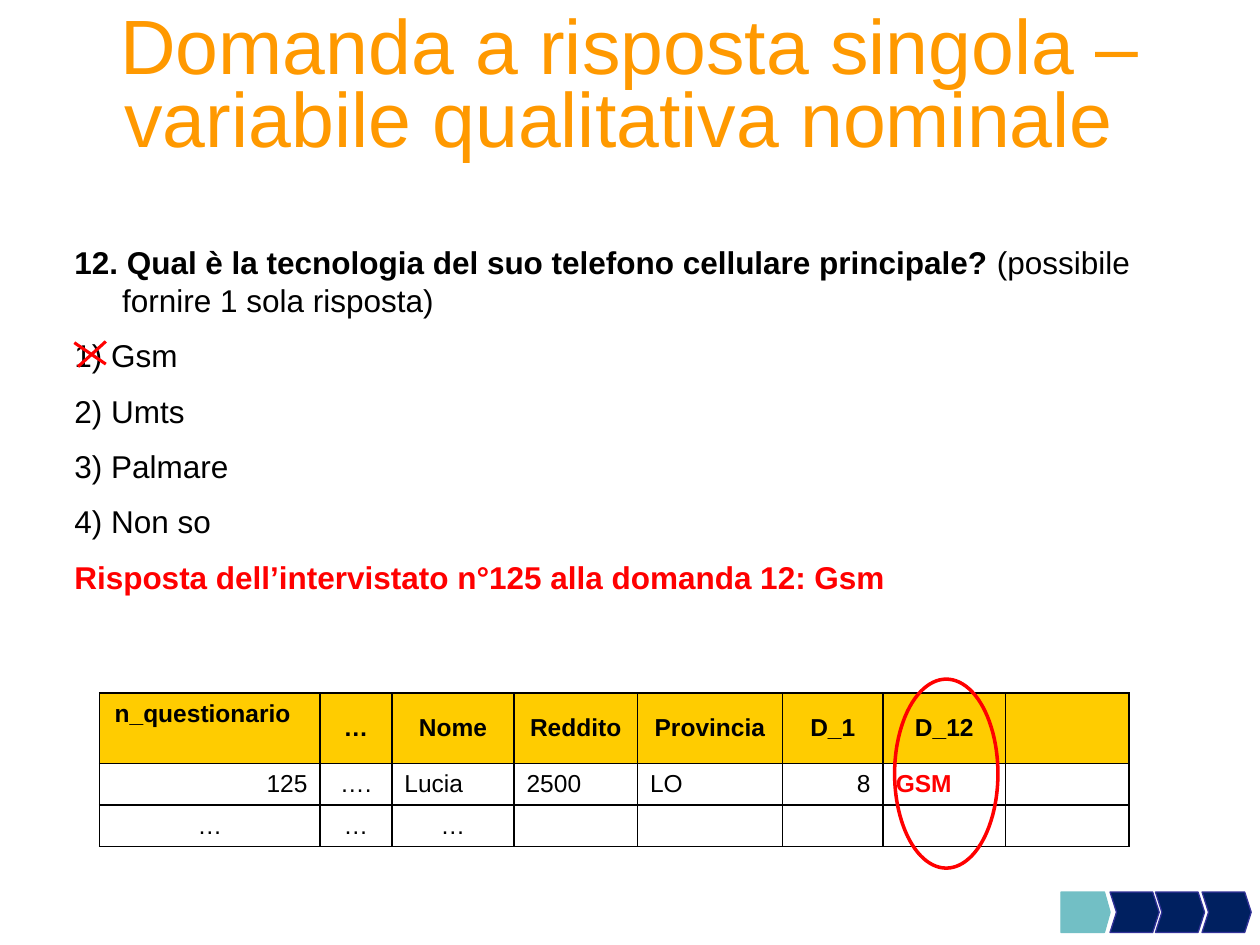
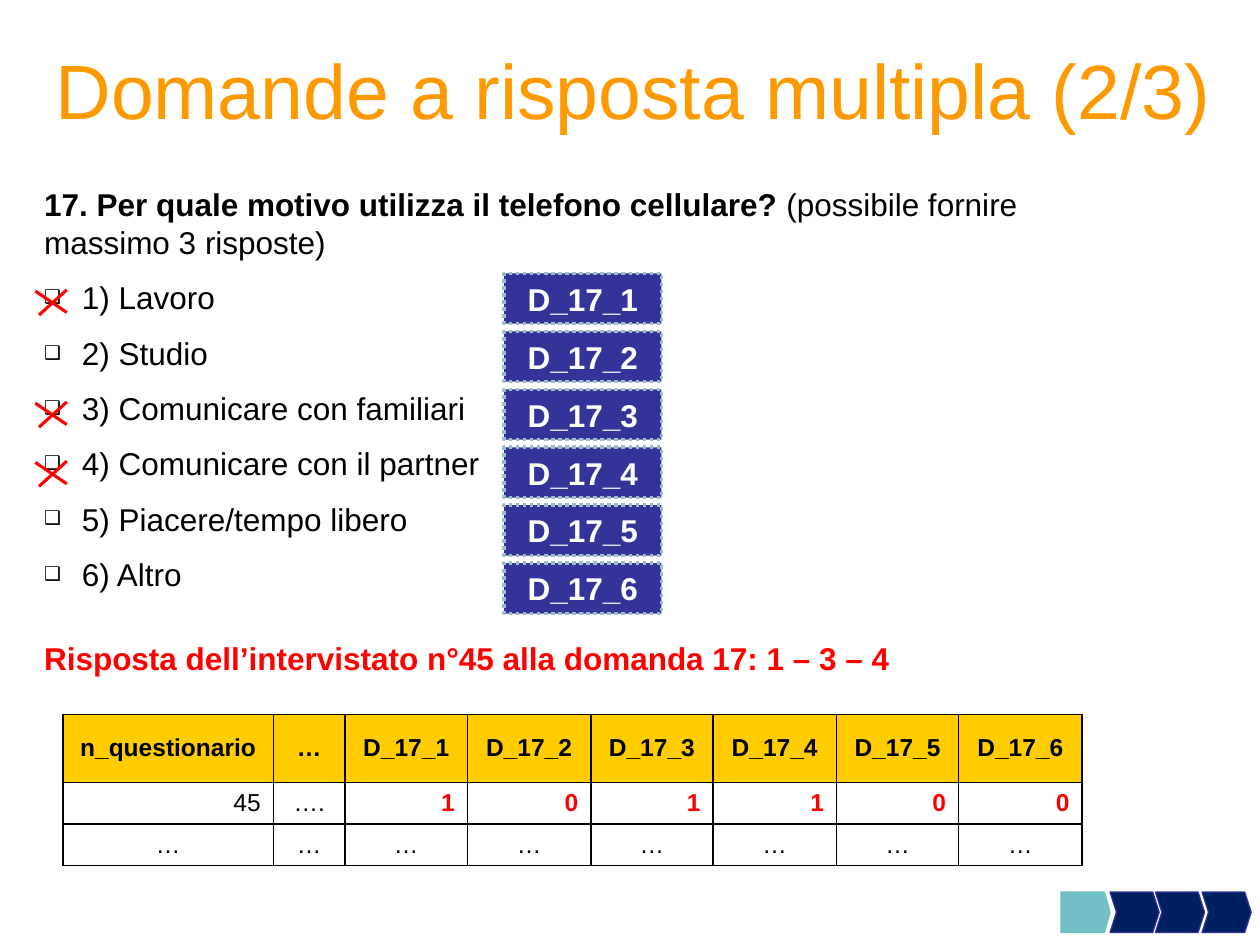
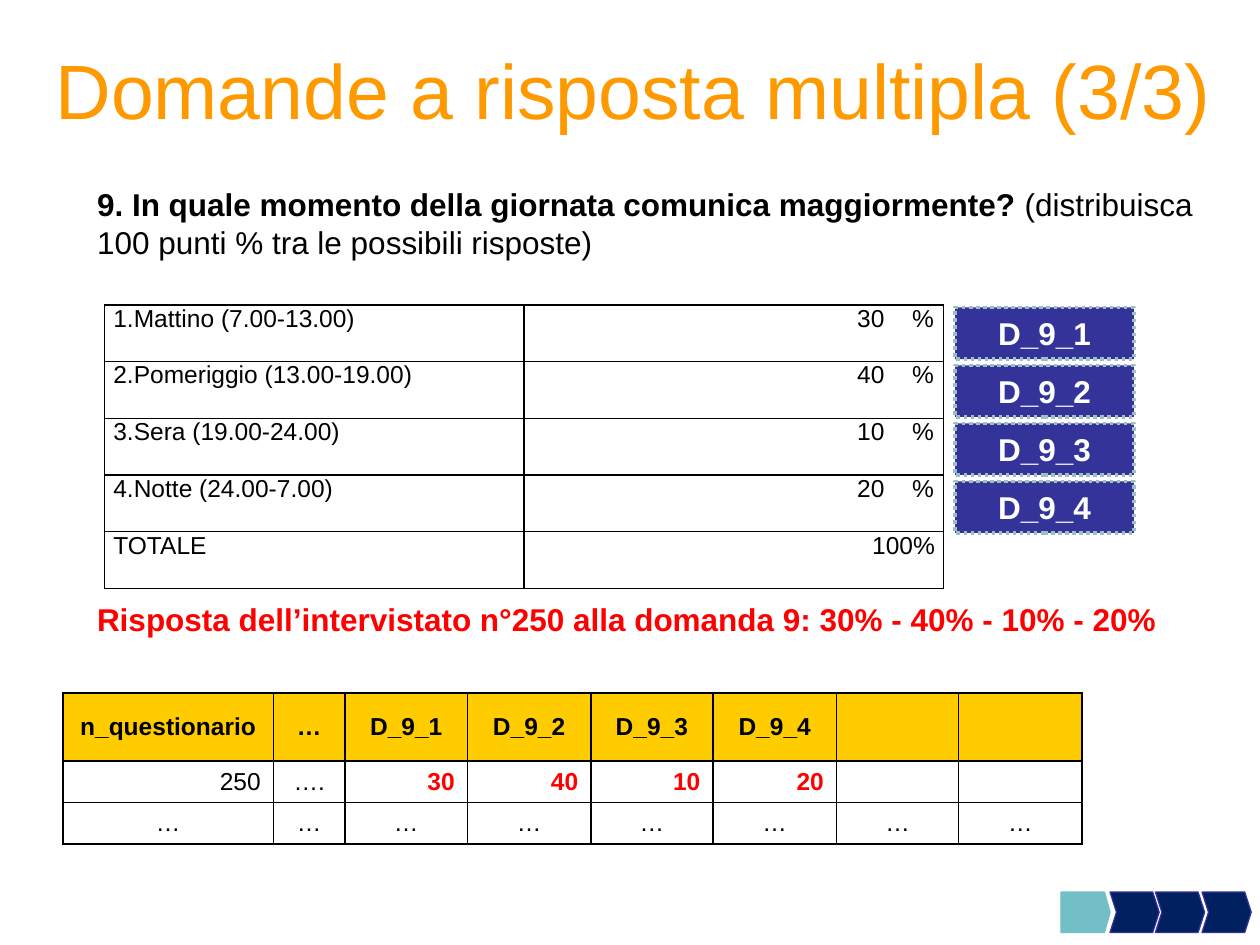
from lxml import etree
from pptx import Presentation, util as u
from pptx.dml.color import RGBColor
from pptx.enum import dml, shapes, text
from pptx.oxml import ns

ORANGE, YELLOW, RED = "FF9900", "FFCC00", "FF0000"
BLACK, WHITE = "000000", "FFFFFF"
NAVY, INDIGO, TEAL, PALE_TEAL = "002060", "333399", "72BFC5", "9BBFC2"
ALIGN = {"l": text.PP_ALIGN.LEFT, "c": text.PP_ALIGN.CENTER, "r": text.PP_ALIGN.RIGHT}
MIDDLE, TOP = text.MSO_ANCHOR.MIDDLE, text.MSO_ANCHOR.TOP


def paint(fill, colour):
    fill.solid()
    fill.fore_color.rgb = RGBColor.from_string(colour)


def write(para, spans, size, **layout):
    """Add (words, colour, bold) spans to a paragraph and set its layout."""
    for name, value in layout.items():
        setattr(para, name, value)
    for words, colour, bold in spans:
        span = para.add_run()
        span.text = words
        for name, value in {"name": "Arial", "size": u.Pt(size), "bold": bold}.items():
            setattr(span.font, name, value)
        paint(span.font.fill, colour)


# Contents of the pages
survey_cols = [1.67, 0.57] + [0.97, 0.98] * 3
dots = ["…"] * 8
pages = [
    {
        "title": ["Domanda a risposta singola –", "variabile qualitativa nominale "],
        "title_at": (0.5, 0.08, 9, 1.25),
        "body_at": (0.49, 1.88, 8.75, 2.98),
        "question": "12. Qual è la tecnologia del suo telefono cellulare principale? ",
        "hint": "(possibile fornire 1 sola risposta)",
        "options": ["1) Gsm", "2) Umts", "3) Palmare", "4) Non so"],
        "answer": "Risposta dell’intervistato n°125 alla domanda 12: Gsm",
        "answer_gap": 10, "hanging": 0.38, "bullet": False,
        "crosses": [(0.59, 2.71)],
        "badges": [], "badge_at": None,
        "grid_at": (0.79, 5.5), "header_height": 0.56, "red_from": 6,
        "cols": [1.75, 0.57, 0.97, 0.98, 1.15, 0.8, 0.97, 0.98],
        "rows": [["n_questionario", "…", "Nome", "Reddito", "Provincia", "D_1", "D_12", ""],
                 ["125", "….", "Lucia", "2500", "LO", "8", "GSM", ""],
                 ["…", "…", "…", "", "", "", "", ""]],
        "record_align": "rclllrll",
    },
    {
        "title": ["Domande a risposta multipla (2/3)"],
        "title_at": (0.31, 0.08, 9.44, 1.25),
        "body_at": (0.25, 1.42, 8.33, 5.7),
        "question": "17. Per quale motivo utilizza il telefono cellulare? ",
        "hint": "(possibile fornire massimo 3 risposte)",
        "options": ["1) Lavoro", "2) Studio", "3) Comunicare con familiari",
                    "4) Comunicare con il partner", "5) Piacere/tempo libero", "6) Altro"],
        "answer": "Risposta dell’intervistato n°45 alla domanda 17: 1 – 3 – 4",
        "answer_gap": 26.5, "hanging": 0, "bullet": True,
        "crosses": [(0.28, 2.3), (0.28, 3.19), (0.28, 3.66)],
        "badges": [f"D_17_{i}" for i in range(1, 7)],
        "badge_at": (4, 2.17, 1.25, 0.4),
        "grid_at": (0.5, 5.67), "header_height": 0.54, "red_from": 2,
        "cols": survey_cols,
        "rows": [["n_questionario", "…"] + [f"D_17_{i}" for i in range(1, 7)],
                 ["45", "….", "1", "0", "1", "1", "0", "0"], dots],
        "record_align": "rcrrrrrr",
    },
    {
        "title": ["Domande a risposta multipla (3/3)"],
        "title_at": (0.31, 0.08, 9.44, 1.25),
        "body_at": (0.67, 1.42, 8.92, 3.89),
        "question": "9. In quale momento della giornata comunica maggiormente? ",
        "hint": "(distribuisca 100 punti % tra le possibili risposte)",
        "options": [],
        "answer": "Risposta dell’intervistato n°250 alla domanda 9: 30% - 40% - 10% - 20%",
        "answer_gap": 194, "hanging": 0, "bullet": False,
        "crosses": [],
        "badges": [f"D_9_{i}" for i in range(1, 5)],
        "badge_at": (7.58, 2.44, 1.42, 0.41),
        "grid_at": (0.5, 5.5), "header_height": 0.54, "red_from": 2,
        "cols": survey_cols,
        "rows": [["n_questionario", "…"] + [f"D_9_{i}" for i in range(1, 5)] + ["", ""],
                 ["250", "….", "30", "40", "10", "20", "", ""], dots],
        "record_align": "rcrrrrrr",
    },
]
moments = [("1.Mattino (7.00-13.00)", "\t30\t%"), ("2.Pomeriggio (13.00-19.00)", "\t40\t%"),
           ("3.Sera (19.00-24.00)", "\t10\t%"), ("4.Notte (24.00-7.00)", "\t20\t%"),
           ("TOTALE", "100%")]
footer = [(8.42, shapes.MSO_SHAPE.PENTAGON, 0.14, TEAL, TEAL)]
footer += [(left, shapes.MSO_SHAPE.CHEVRON, 0.16, NAVY, INDIGO) for left in (8.81, 9.17, 9.54)]

deck = Presentation()
deck.slide_width, deck.slide_height = u.Inches(10), u.Inches(7.5)
grids = []

for content in pages:
    page = deck.slides.add_slide(deck.slide_layouts[1])
    title, body = page.placeholders

    # Title and body placeholders
    for box, at, anchor in ((title, content["title_at"], MIDDLE), (body, content["body_at"], TOP)):
        for name, value in zip(("left", "top", "width", "height"), at):
            setattr(box, name, u.Inches(value))
        frame = box.text_frame
        for name, value in {"word_wrap": True, "auto_size": text.MSO_AUTO_SIZE.NONE,
                            "vertical_anchor": anchor}.items():
            setattr(frame, name, value)
    para = title.text_frame.paragraphs[0]
    for number, line in enumerate(content["title"]):
        if number:
            para.add_line_break()
        write(para, [(line, ORANGE, False)], 44, alignment=ALIGN["c"],
              line_spacing=0.8 if len(content["title"]) > 1 else 1.0)

    # Question, options and answer
    lines = [([(content["question"], BLACK, True), (content["hint"], BLACK, False)], 0, False)]
    lines += [([(option, BLACK, False)], 10, content["bullet"]) for option in content["options"]]
    lines += [([(content["answer"], RED, True)], content["answer_gap"], False)]
    for number, (spans, gap, bullet) in enumerate(lines):
        para = body.text_frame.add_paragraph() if number else body.text_frame.paragraphs[0]
        write(para, spans, 18, space_before=u.Pt(gap), alignment=ALIGN["l"])
        hanging = u.Inches(0.3 if bullet else content["hanging"])
        props = para._p.get_or_add_pPr()
        props.set("marL", str(hanging))
        props.set("indent", str(-hanging))
        if bullet:
            etree.SubElement(props, ns.qn("a:buSzPct"), val="60000")
            etree.SubElement(props, ns.qn("a:buChar"), char="❑")
        else:
            etree.SubElement(props, ns.qn("a:buNone"))

    # Variable name badges
    for number, label in enumerate(content["badges"]):
        left, top, width, height = content["badge_at"]
        badge = page.shapes.add_shape(
            shapes.MSO_SHAPE.RECTANGLE, u.Inches(left), u.Inches(top + 0.46 * number),
            u.Inches(width), u.Inches(height))
        badge.shadow.inherit = False
        paint(badge.fill, INDIGO)
        paint(badge.line.fill, PALE_TEAL)
        badge.line.width = u.Pt(2)
        badge.line.dash_style = dml.MSO_LINE.ROUND_DOT
        badge.text_frame.vertical_anchor = MIDDLE
        write(badge.text_frame.paragraphs[0], [(label, WHITE, True)], 18, alignment=ALIGN["c"])

    # Crosses over the chosen options
    for left, top in content["crosses"]:
        for x1, y1, x2, y2 in ((0, 0.01, 0.25, 0.18), (0.03, 0.2, 0.25, 0)):
            stroke = page.shapes.add_connector(
                shapes.MSO_CONNECTOR.STRAIGHT, u.Inches(left + x1), u.Inches(top + y1),
                u.Inches(left + x2), u.Inches(top + y2))
            paint(stroke.line.fill, RED)
            stroke.line.width = u.Pt(1.75)
            etree.SubElement(stroke._element.spPr, ns.qn("a:effectLst"))

    # Data grid
    left, top = content["grid_at"]
    heights = [content["header_height"], 0.33, 0.33]
    grid = page.shapes.add_table(3, 8, u.Inches(left), u.Inches(top),
                                 u.Inches(sum(content["cols"])), u.Inches(sum(heights))).table
    grids.append((grid, content["cols"], heights))
    for r, (values, aligns) in enumerate(zip(content["rows"],
                                             ("c" * 8, content["record_align"], "c" * 8))):
        for c, value in enumerate(values):
            cell = grid.cell(r, c)
            cell.vertical_anchor = MIDDLE
            cell.margin_top = cell.margin_bottom = 0
            red = r == 1 and c >= content["red_from"]
            if value:
                write(cell.text_frame.paragraphs[0],
                      [(value, RED if red else BLACK, r == 0 or red)], 14,
                      alignment=ALIGN[aligns[c]])

    # Footer arrows
    for left, kind, point, colour, edge in footer:
        arrow = page.shapes.add_shape(kind, u.Inches(left), u.Inches(7.08),
                                      u.Inches(0.39), u.Inches(0.32))
        arrow.shadow.inherit = False
        arrow.adjustments[0] = point
        paint(arrow.fill, colour)
        paint(arrow.line.fill, edge)
        arrow.line.width = u.Pt(0.75)

# First page: raised first heading and ring around the answer
heading = grids[0][0].cell(0, 0)
heading.vertical_anchor = TOP
heading.margin_top, heading.margin_left = u.Inches(0.06), u.Inches(0.12)
heading.text_frame.paragraphs[0].alignment = ALIGN["l"]
ring = deck.slides[0].shapes.add_shape(shapes.MSO_SHAPE.OVAL, u.Inches(7.1), u.Inches(5.39),
                                       u.Inches(0.82), u.Inches(1.5))
ring.shadow.inherit = False
ring.fill.background()
paint(ring.line.fill, RED)
ring.line.width = u.Pt(2)

# Last page: points given to each moment of the day
points = deck.slides[2].shapes.add_table(5, 2, u.Inches(0.83), u.Inches(2.42),
                                         u.Inches(6.66), u.Inches(2.25)).table
grids.append((points, [3.33] * 2, [0.45] * 5))
for r, row in enumerate(moments):
    for c, value in enumerate(row):
        cell = points.cell(r, c)
        cell.margin_left = cell.margin_right = u.Inches(0.07)
        cell.margin_top = cell.margin_bottom = 0
        para = cell.text_frame.paragraphs[0]
        write(para, [(value, BLACK, False)], 14, alignment=ALIGN["r" if value == "100%" else "l"])
        if "\t" in value:
            tabs = etree.SubElement(para._p.get_or_add_pPr(), ns.qn("a:tabLst"))
            for place, side in ((2.79, "r"), (3.01, "l")):
                etree.SubElement(tabs, ns.qn("a:tab"), pos=str(u.Inches(place)), algn=side)

# Sizes, borders and fills of every table
for grid, widths, heights in grids:
    grid.first_row = grid.horz_banding = False
    for column, width in zip(grid.columns, widths):
        column.width = u.Inches(width)
    for r, (row, height) in enumerate(zip(grid.rows, heights)):
        row.height = u.Inches(height)
        for cell in row.cells:
            props = cell._tc.get_or_add_tcPr()
            for side in ("lnL", "lnR", "lnT", "lnB"):
                border = etree.SubElement(props, ns.qn(f"a:{side}"), w=str(u.Pt(1)))
                ink = etree.SubElement(border, ns.qn("a:solidFill"))
                etree.SubElement(ink, ns.qn("a:srgbClr"), val=BLACK)
            if r == 0 and grid is not points:
                paint(cell.fill, YELLOW)
            else:
                cell.fill.background()

deck.save("out.pptx")
